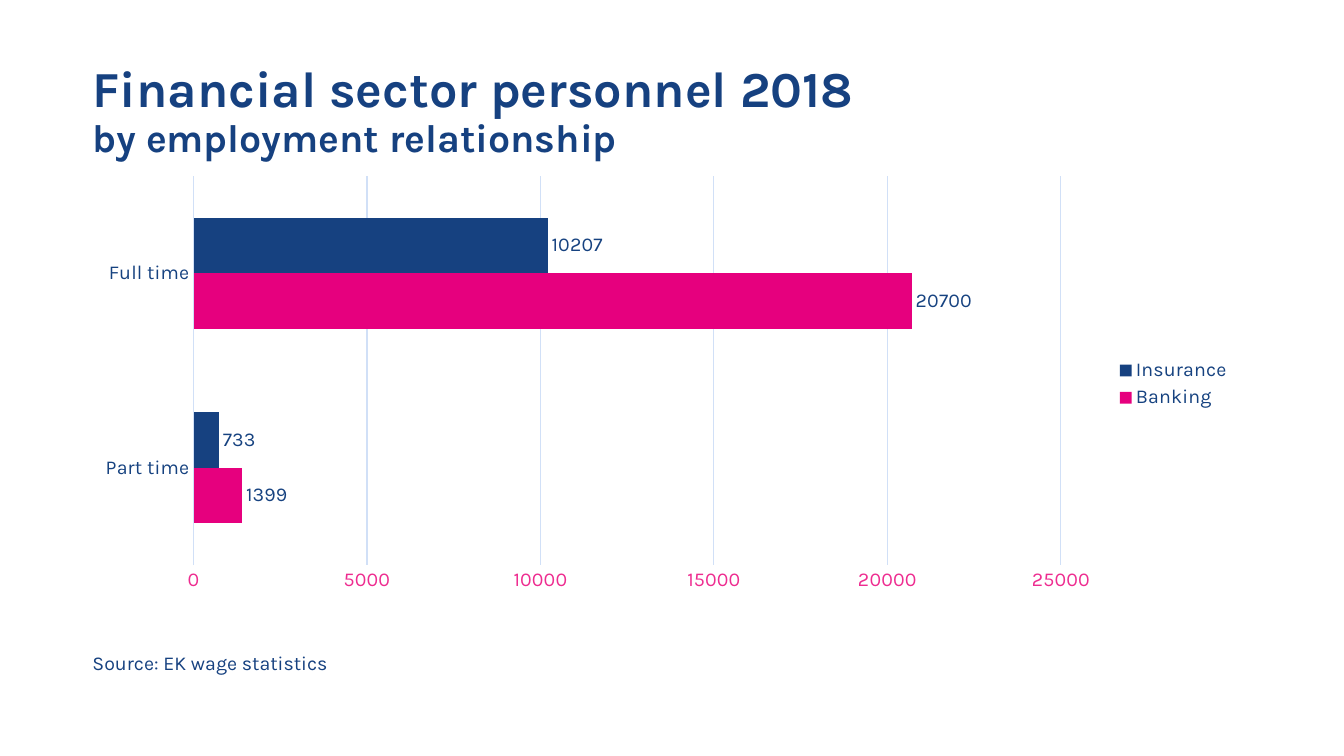
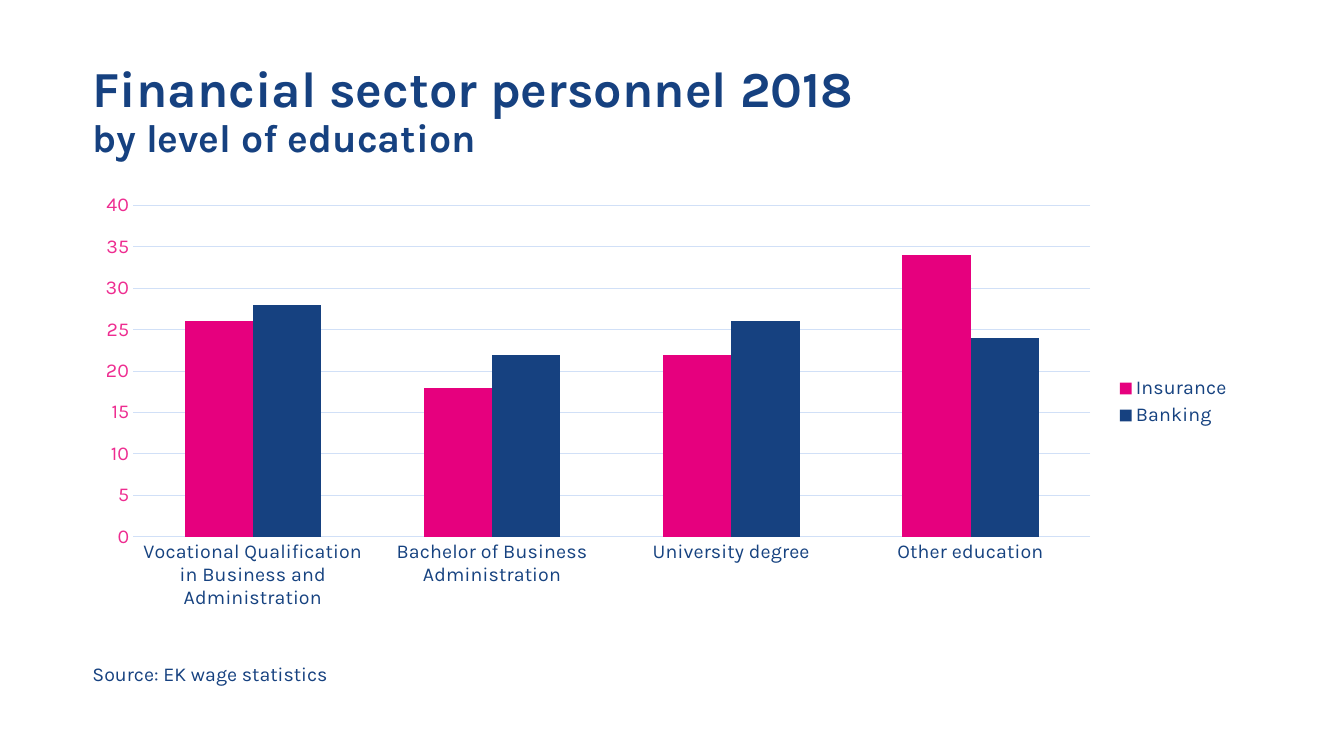
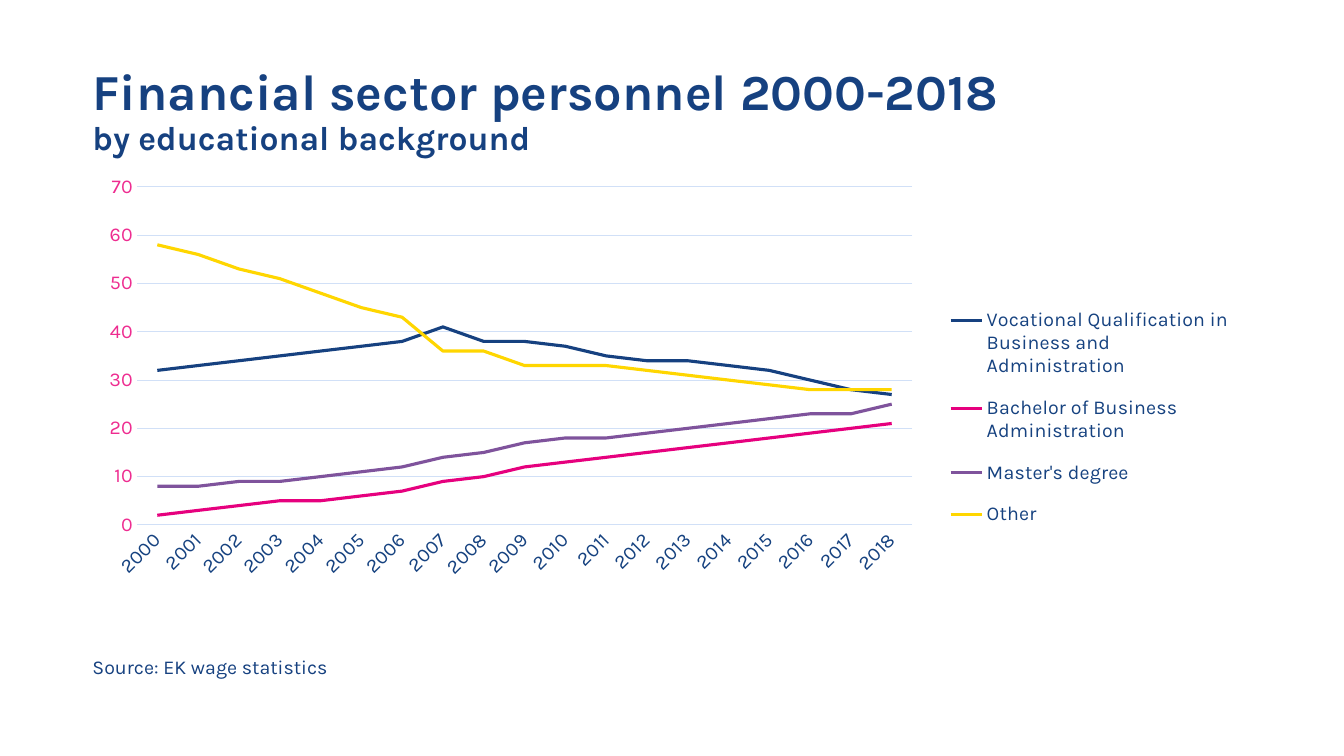
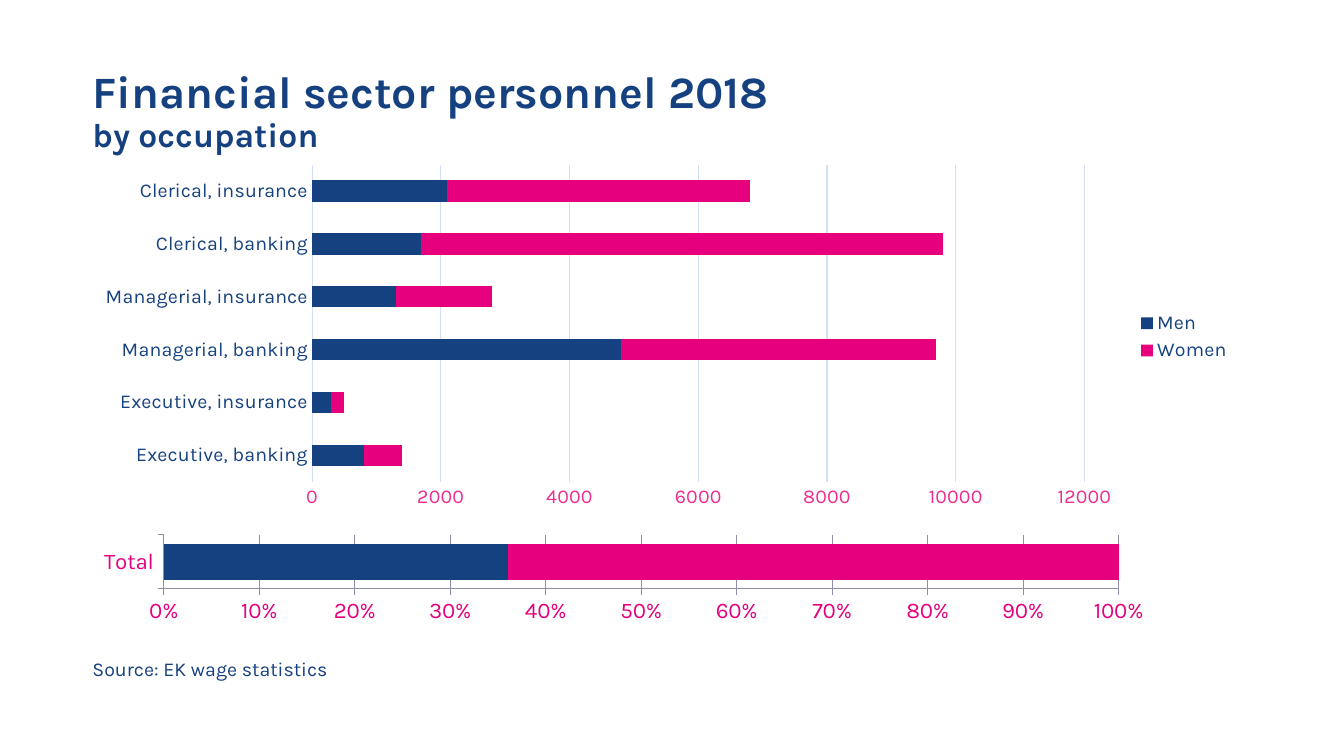
from dataclasses import dataclass
from typing import Optional

from pptx import Presentation
from pptx.chart.axis import _BaseAxis as Axis
from pptx.chart.chart import Chart
from pptx.chart.data import CategoryChartData
from pptx.dml.color import RGBColor
from pptx.enum.chart import XL_CHART_TYPE as ChartType
from pptx.enum.chart import XL_LABEL_POSITION as LabelPosition
from pptx.enum.chart import XL_LEGEND_POSITION as LegendPosition
from pptx.enum.chart import XL_TICK_MARK as TickMark
from pptx.enum.text import MSO_ANCHOR as Anchor
from pptx.enum.text import MSO_AUTO_SIZE as AutoSize
from pptx.oxml import parse_xml
from pptx.oxml.ns import nsdecls
from pptx.slide import Slide
from pptx.util import Cm, Pt

# Shared look
FONT = "Karla"
NAVY, PINK, PURPLE, YELLOW = "164180", "E6007E", "7F539C", "FFD600"
LABEL_BLUE, SCALE_PINK, GRID_BLUE, AXIS_GREY = "164280", "EE2C90", "D1E0F7", "8B8FA8"
LEFT, CONTENT_WIDTH = 2.08, 29.21
SOURCE = "Source: EK wage statistics"

VOCATIONAL = "Vocational Qualification in Business and Administration"
BACHELOR = "Bachelor of Business Administration"


@dataclass(frozen=True)
class Series:
    name: str
    color: str
    values: tuple[int, ...]


@dataclass(frozen=True)
class Area:
    """A place inside a chart, in centimetres."""
    left: float
    top: float
    width: float
    height: float


@dataclass(frozen=True)
class ChartPlan:
    kind: ChartType
    top: float
    height: float
    categories: tuple[str, ...]
    series: tuple[Series, ...]
    width: float = CONTENT_WIDTH
    gap: int = 150
    value_labels: bool = False
    plot_area: Optional[Area] = None
    legend_area: Optional[Area] = None
    label_angle: int = 0
    share_bar: bool = False


@dataclass(frozen=True)
class SlidePlan:
    title: str
    subtitle: str
    title_size: int
    subtitle_size: int
    source_top: float
    charts: tuple[ChartPlan, ...]


SLIDES = (
    SlidePlan(
        "Financial sector personnel 2018", "by employment relationship", 36, 28, 16.28,
        (ChartPlan(
            ChartType.BAR_CLUSTERED, 4.22, 10.92, ("Part time", "Full time"),
            (Series("Banking", PINK, (1399, 20700)),
             Series("Insurance", NAVY, (733, 10207))),
            value_labels=True),),
    ),
    SlidePlan(
        "Financial sector personnel 2018", "by level of education", 36, 28, 16.56,
        (ChartPlan(
            ChartType.COLUMN_CLUSTERED, 4.67, 10.92,
            (VOCATIONAL, BACHELOR, "University degree", "Other education"),
            (Series("Insurance", PINK, (26, 18, 22, 34)),
             Series("Banking", NAVY, (28, 22, 26, 24)))),),
    ),
    SlidePlan(
        "Financial sector personnel 2000-2018", "by educational background", 36, 24, 16.38,
        (ChartPlan(
            ChartType.LINE, 4.22, 10.92, tuple(str(year) for year in range(2000, 2019)),
            (Series(VOCATIONAL, NAVY, (32, 33, 34, 35, 36, 37, 38, 41, 38, 38,
                                       37, 35, 34, 34, 33, 32, 30, 28, 27)),
             Series(BACHELOR, PINK, (2, 3, 4, 5, 5, 6, 7, 9, 10, 12,
                                     13, 14, 15, 16, 17, 18, 19, 20, 21)),
             Series("Master's degree", PURPLE, (8, 8, 9, 9, 10, 11, 12, 14, 15, 17,
                                                18, 18, 19, 20, 21, 22, 23, 23, 25)),
             Series("Other", YELLOW, (58, 56, 53, 51, 48, 45, 43, 36, 36, 33,
                                      33, 33, 32, 31, 30, 29, 28, 28, 28))),
            plot_area=Area(1.37, 0.49, 19.54, 8.52),
            legend_area=Area(21.73, 3.1, 7.3, 6.4), label_angle=-45),),
    ),
    SlidePlan(
        "Financial sector personnel 2018", "by occupation", 32, 24, 16.42,
        (ChartPlan(
            ChartType.BAR_STACKED, 3.97, 9.04,
            ("Executive, banking", "Executive, insurance", "Managerial, banking",
             "Managerial, insurance", "Clerical, banking", "Clerical, insurance"),
            (Series("Men", NAVY, (800, 300, 4800, 1300, 1700, 2100)),
             Series("Women", PINK, (600, 200, 4900, 1500, 8100, 4700)))),
         ChartPlan(
             ChartType.BAR_STACKED_100, 13.43, 2.34, ("Total",),
             (Series("Series 1", NAVY, (36,)), Series("Series 2", PINK, (64,))),
             width=27.28, gap=50, share_bar=True)),
    ),
)


def rgb(color: str) -> RGBColor:
    return RGBColor.from_string(color)


def style_font(font, size: int, color: str, bold: bool = False) -> None:
    font.name, font.size, font.bold = FONT, Pt(size), bold
    font.color.rgb = rgb(color)


def style_line(line, color: str, width: float = 0.75) -> None:
    line.color.rgb = rgb(color)
    line.width = Pt(width)


# Text
def add_title(slide: Slide, plan: SlidePlan) -> None:
    frame = slide.shapes.add_textbox(Cm(LEFT), Cm(0.99), Cm(CONTENT_WIDTH), Cm(3.68)).text_frame
    frame.word_wrap = True
    frame.vertical_anchor = Anchor.MIDDLE
    heading = frame.paragraphs[0]
    heading.line_spacing = 0.9
    title = heading.add_run()
    title.text = plan.title
    style_font(title.font, plan.title_size, NAVY, bold=True)
    heading.add_line_break()
    subtitle = heading.add_run()
    subtitle.text = plan.subtitle
    style_font(subtitle.font, plan.subtitle_size, NAVY, bold=True)


def add_source(slide: Slide, top: float) -> None:
    frame = slide.shapes.add_textbox(Cm(LEFT), Cm(top), Cm(6.78), Cm(0.86)).text_frame
    frame.word_wrap = False
    frame.auto_size = AutoSize.SHAPE_TO_FIT_TEXT
    source = frame.paragraphs[0].add_run()
    source.text = SOURCE
    style_font(source.font, 14, NAVY)


# Charts
def style_axis(axis: Axis, size: int, color: str, tick: TickMark) -> None:
    axis.major_tick_mark = tick
    axis.minor_tick_mark = TickMark.NONE
    style_font(axis.tick_labels.font, size, color)


def style_scales(chart: Chart) -> None:
    names, values = chart.category_axis, chart.value_axis
    style_axis(names, 14, LABEL_BLUE, TickMark.NONE)
    style_axis(values, 14, SCALE_PINK, TickMark.NONE)
    style_line(names.format.line, GRID_BLUE)
    values.format.line.fill.background()
    values.has_major_gridlines = True
    style_line(values.major_gridlines.format.line, GRID_BLUE)


def style_share_scales(chart: Chart) -> None:
    for axis in (chart.category_axis, chart.value_axis):
        style_axis(axis, 16, PINK, TickMark.OUTSIDE)
        style_line(axis.format.line, AXIS_GREY)
    shares = chart.value_axis
    shares.major_unit = 0.1
    shares.tick_labels.number_format = "0%"
    shares.tick_labels.number_format_is_linked = False
    shares.has_major_gridlines = True
    style_line(shares.major_gridlines.format.line, AXIS_GREY)


def add_legend(chart: Chart) -> None:
    chart.has_legend = True
    chart.legend.position = LegendPosition.RIGHT
    chart.legend.include_in_layout = False
    style_font(chart.legend.font, 14, LABEL_BLUE)


def add_value_labels(chart: Chart) -> None:
    for drawn in chart.plots[0].series:
        labels = drawn.data_labels
        labels.show_value = True
        labels.position = LabelPosition.OUTSIDE_END
        style_font(labels.font, 14, LABEL_BLUE)


def place_part(part, index: int, area: Area, plan: ChartPlan, target: str = "") -> None:
    """Fix a chart part in place; index is where its layout element belongs."""
    shares = {"x": area.left / plan.width, "y": area.top / plan.height,
              "w": area.width / plan.width, "h": area.height / plan.height}
    sides = "".join(f'<c:{side} val="{share:.4f}"/>' for side, share in shares.items())
    layout = parse_xml(
        f'<c:layout {nsdecls("c")}><c:manualLayout>{target}'
        f'<c:xMode val="edge"/><c:yMode val="edge"/>{sides}</c:manualLayout></c:layout>')
    for automatic in part.findall(layout.tag):
        part.remove(automatic)
    part.insert(index, layout)


def color_series(chart: Chart, plan: ChartPlan) -> None:
    plot = chart.plots[0]
    plot.vary_by_categories = False
    is_line = plan.kind == ChartType.LINE
    if not is_line:
        plot.gap_width = plan.gap
        if plan.kind in (ChartType.BAR_STACKED, ChartType.BAR_STACKED_100):
            plot.overlap = 100
    for drawn, series in zip(plot.series, plan.series):
        if is_line:
            drawn.smooth = False
            style_line(drawn.format.line, series.color, 2.25)
        else:
            drawn.format.fill.solid()
            drawn.format.fill.fore_color.rgb = rgb(series.color)


def add_chart(slide: Slide, plan: ChartPlan) -> None:
    data = CategoryChartData()
    data.categories = plan.categories
    for series in plan.series:
        data.add_series(series.name, series.values)
    chart = slide.shapes.add_chart(
        plan.kind, Cm(LEFT), Cm(plan.top), Cm(plan.width), Cm(plan.height), data).chart
    chart.has_title = False
    color_series(chart, plan)
    if plan.share_bar:
        style_font(chart.font, 18, PINK)
        chart.has_legend = False
        style_share_scales(chart)
    else:
        style_font(chart.font, 14, LABEL_BLUE)
        add_legend(chart)
        style_scales(chart)
    if plan.value_labels:
        add_value_labels(chart)
    if plan.plot_area:
        place_part(chart._chartSpace.chart.plotArea, 0, plan.plot_area, plan,
                   '<c:layoutTarget val="inner"/>')
    if plan.legend_area:
        place_part(chart.legend._element, 1, plan.legend_area, plan)
    if plan.label_angle:
        text = chart.category_axis._element.txPr
        text.bodyPr.set("rot", str(plan.label_angle * 60000))


def main() -> None:
    deck = Presentation()
    deck.slide_width, deck.slide_height = Cm(33.87), Cm(19.05)
    for plan in SLIDES:
        slide = deck.slides.add_slide(deck.slide_layouts[6])
        add_title(slide, plan)
        for chart in plan.charts:
            add_chart(slide, chart)
        add_source(slide, plan.source_top)
    deck.save("out.pptx")


if __name__ == "__main__":
    main()
